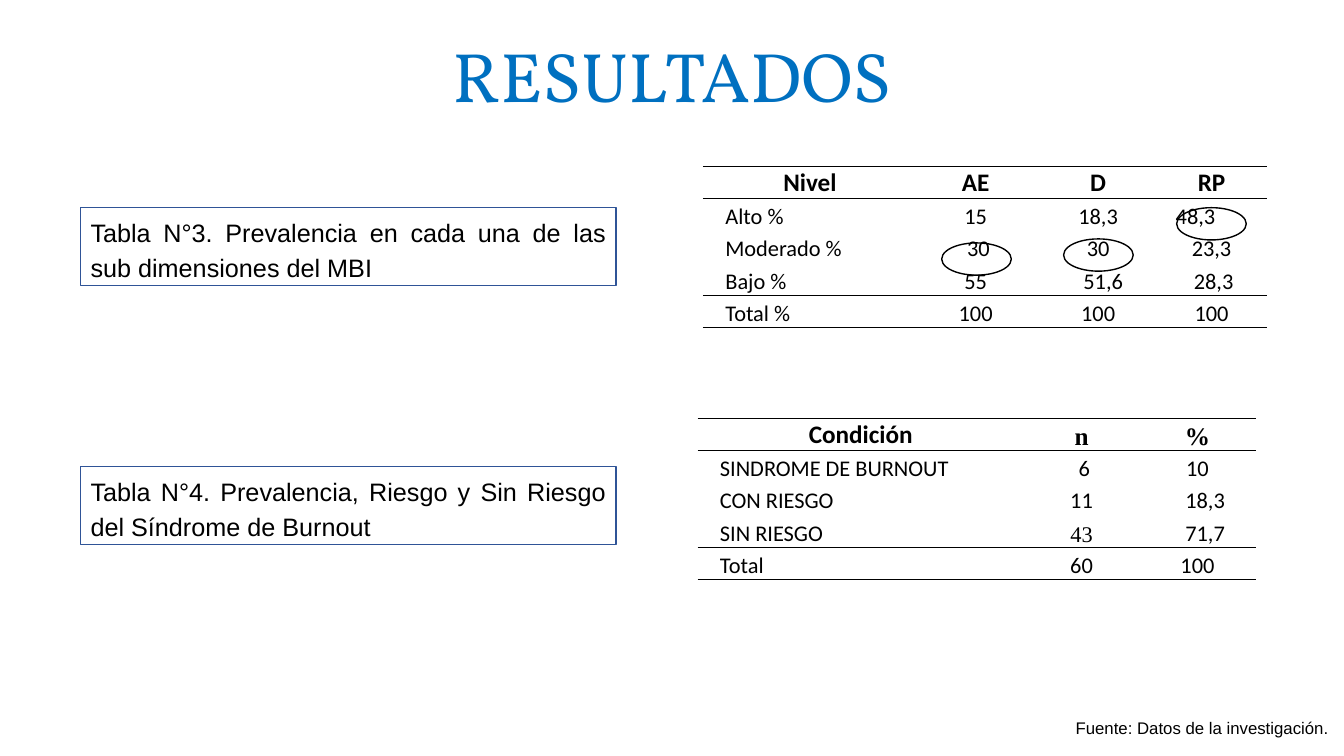
from lxml.etree import SubElement
from pptx import Presentation
from pptx.dml.color import RGBColor
from pptx.enum.shapes import MSO_SHAPE
from pptx.enum.text import MSO_ANCHOR, PP_ALIGN
from pptx.oxml.ns import qn
from pptx.util import Inches, Pt

BLACK = RGBColor(0x00, 0x00, 0x00)
WHITE = RGBColor(0xFF, 0xFF, 0xFF)
BLUE = RGBColor(0x00, 0x70, 0xC0)
NAVY = RGBColor(0x2F, 0x54, 0x97)
LEFT, MID, RIGHT, FULL = PP_ALIGN.LEFT, PP_ALIGN.CENTER, PP_ALIGN.RIGHT, PP_ALIGN.JUSTIFY
PLAIN = "{2D5ABB26-0587-4C30-8999-92F81FD0307C}"  # table style without lines

deck = Presentation()
deck.slide_width, deck.slide_height = Inches(13.33), Inches(7.5)
COL, ROW = deck.slide_width / 100, deck.slide_height / 100
LINE = Pt(11.5)
slide = deck.slides.add_slide(deck.slide_layouts[6])
shapes = slide.shapes


def grid(x, y, w, h):
    """Turn columns and rows into lengths."""
    return int(x * COL), int(y * ROW), int(w * COL), int(h * ROW)


def write(par, text, size, font, align, gap, color=BLACK, bold=False):
    par.alignment, par.line_spacing = align, gap
    run = par.add_run()
    run.text = text
    run.font.size, run.font.name, run.font.bold = Pt(size), font, bold
    run.font.color.rgb = color


# Rings behind the key values
for x, y in [(70.07, 32.13), (79.14, 31.6), (87.55, 27.47)]:
    ring = shapes.add_shape(MSO_SHAPE.OVAL, *grid(x, y, 5.18, 4.27))
    ring.shadow.inherit = False
    ring.fill.solid()
    ring.fill.fore_color.rgb = WHITE
    ring.line.color.rgb, ring.line.width = BLACK, Pt(1)

# Title and source
for text, place, size, font, align, gap, color in [
    ("RESULTADOS", (16.25, 2.93, 67.5, 15.33), 50, "Vollkorn", MID, 0.9, BLUE),
    ("Fuente: Datos de la investigación.", (26.4, 92.93, 73.2, 4.93),
     12, "Arial", RIGHT, 1.5, BLACK),
]:
    frame = shapes.add_textbox(*grid(*place)).text_frame
    frame.word_wrap = True
    frame.vertical_anchor = MSO_ANCHOR.MIDDLE if align == MID else MSO_ANCHOR.TOP
    write(frame.paragraphs[0], text, size, font, align, gap, color)

# Captions
for y, text in [
    (27.47, "Tabla N°3. Prevalencia en cada una de las sub dimensiones del MBI"),
    (61.73, "Tabla N°4. Prevalencia, Riesgo y Sin Riesgo del Síndrome de Burnout"),
]:
    box = shapes.add_shape(MSO_SHAPE.RECTANGLE, *grid(6, y, 39.83, 10.27))
    box.shadow.inherit = False
    box.fill.solid()
    box.fill.fore_color.rgb = WHITE
    box.line.color.rgb, box.line.width = NAVY, Pt(1)
    box.text_frame.word_wrap = True
    box.text_frame.vertical_anchor = MSO_ANCHOR.TOP
    write(box.text_frame.paragraphs[0], text, 18, "Arial", FULL, 1.15)

# Each entry: text, indent in columns, alignment
LEVELS = [
    [[("Nivel", 0.4, MID)], [("AE", 0, MID)], [("D", 0, MID)], [("RP", 0, MID)]],
    [[("Alto %", 1.15, LEFT), ("Moderado %", 1.15, LEFT), ("Bajo %", 1.15, LEFT)],
     [("15", 0, MID), ("30", 0.4, MID), ("55", 0, MID)],
     [("18,3", 0, MID), ("30", 0, MID), ("51,6", 0.75, MID)],
     [("48,3", 0.9, LEFT), ("23,3", 0, MID), ("28,3", 2.25, LEFT)]],
    [[("Total %", 1.15, LEFT)], [("100", 0, MID)], [("100", 0, MID)], [("100", 0, MID)]],
]
STATES = [
    [[("Condición", 0, MID)], [("n", 0, MID)], [("%", 0, MID)]],
    [[("SINDROME DE BURNOUT", 1.15, LEFT), ("CON RIESGO", 1.15, LEFT),
      ("SIN RIESGO", 1.15, LEFT)],
     [("6", 0.4, MID), ("11", 0, MID), ("43", 0, MID)],
     [("10", 0, MID), ("18,3", 1.15, MID), ("71,7", 1.15, MID)]],
    [[("Total", 1.15, LEFT)], [("60", 0, MID)], [("100", 0, MID)]],
]
SERIF = {"n", "%", "43"}
EDGES = [("lnT", "lnB"), ("lnT",), ("lnB",)]

for x, y, wide, data in [
    (52.3, 22, (15.53, 9.53, 8.7, 8.18), LEVELS),
    (51.9, 55.33, (24.3, 8.55, 8.7), STATES),
]:
    table = shapes.add_table(3, len(wide), *grid(x, y, sum(wide), 21.3)).table
    table.first_row = table.horz_banding = False
    table._tbl.tblPr.find(qn("a:tableStyleId")).text = PLAIN
    for col, width in zip(table.columns, wide):
        col.width = int(width * COL)
    for r, line in enumerate(data):
        table.rows[r].height = 2 * LINE * len(line[0])
        for c, items in enumerate(line):
            cell = table.cell(r, c)
            cell.margin_left = cell.margin_right = Inches(0.07)
            cell.margin_top, cell.margin_bottom = LINE, 0
            prop = cell._tc.get_or_add_tcPr()
            for edge in EDGES[r]:
                rule = SubElement(prop, qn("a:" + edge), w=str(Pt(1)))
                paint = SubElement(rule, qn("a:solidFill"))
                SubElement(paint, qn("a:srgbClr"), val=str(BLACK))
            cell.fill.background()
            for i, (text, inset, align) in enumerate(items):
                par = cell.text_frame.add_paragraph() if i else cell.text_frame.paragraphs[0]
                if i:
                    par.space_before = LINE
                if inset:
                    par._p.get_or_add_pPr().set("marL", str(int(inset * COL)))
                font = "Times New Roman" if text in SERIF else "Calibri"
                write(par, text, 16 if r else 18, font, align, LINE, bold=r == 0)

deck.save("out.pptx")
